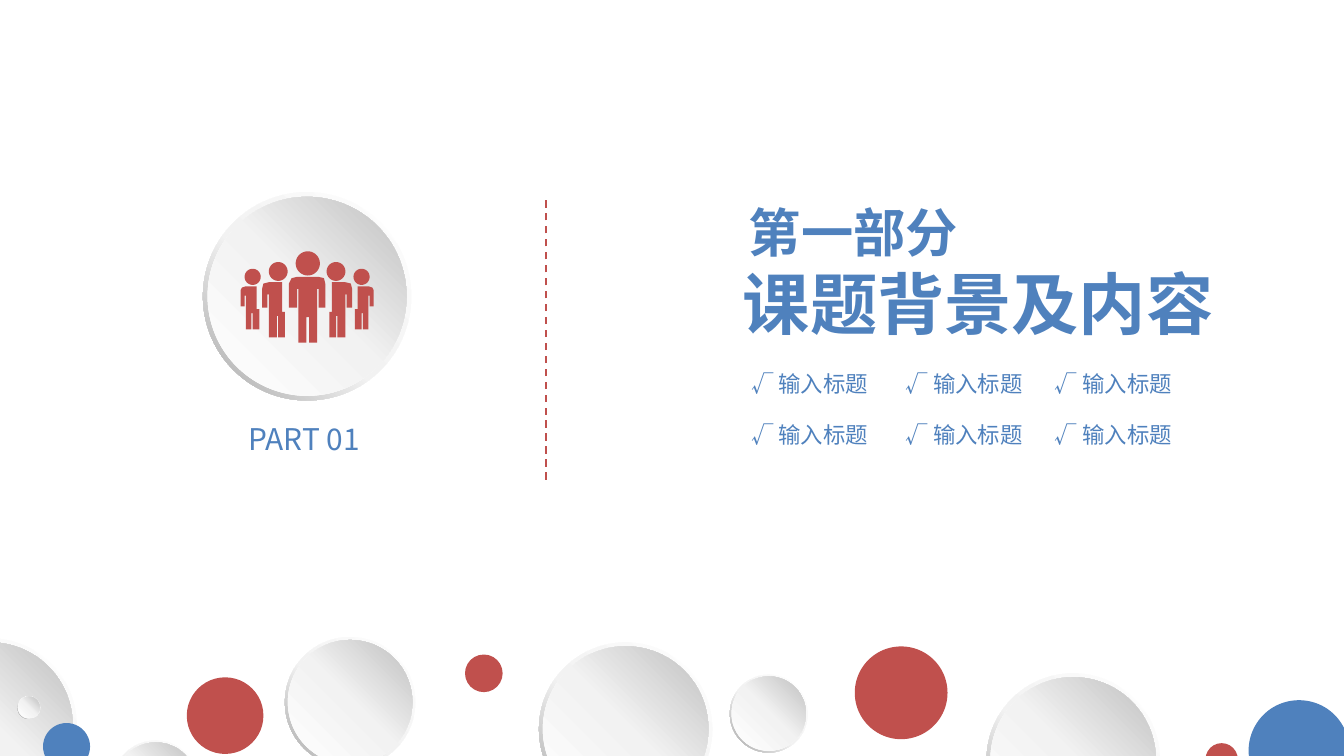
"""Build a section title slide with a people badge and a border of bubbles."""
from copy import deepcopy
from math import cos, pi, sin

from lxml.etree import SubElement
from pptx import Presentation
from pptx.dml.color import RGBColor
from pptx.enum.dml import MSO_LINE
from pptx.enum.shapes import MSO_CONNECTOR, MSO_SHAPE
from pptx.enum.text import MSO_ANCHOR, PP_ALIGN
from pptx.oxml.ns import qn
from pptx.util import Inches, Pt

BLUE = RGBColor(0x4F, 0x81, 0xBD)
RED = RGBColor(0xC0, 0x50, 0x4D)
WHITE = RGBColor(0xFF, 0xFF, 0xFF)
PALE = RGBColor(0xF2, 0xF2, 0xF2)
SILVER = RGBColor(0xBF, 0xBF, 0xBF)
GREY = RGBColor(0xA6, 0xA6, 0xA6)

RIM = {"angle": 225, "stops": [(0, WHITE), (0.55, PALE), (1, GREY)]}
FACE = {"angle": 45, "stops": [(0, WHITE), (0.51, PALE), (1, SILVER)]}

BUBBLES = [
    (4.01, 4.78, 1.29, None), (6.36, 4.81, 0.69, RED),
    (2.12, 4.74, 0.97, None), (9.29, 5.21, 0.75, BLUE),
    (0.84, 5.51, 0.64, None), (3.46, 4.87, 0.28, RED),
    (5.43, 5.02, 0.58, None), (7.34, 5.01, 1.29, None),
    (8.97, 5.53, 0.24, RED), (-0.72, 4.75, 1.29, None),
    (1.39, 5.04, 0.57, RED), (0.32, 5.38, 0.35, BLUE),
    (0.13, 5.18, 0.17, None),
]

MIRROR = 4.57
LEADER_HEAD = (2.29, 1.96, 0.09)
LEADER_BODY = [
    (2.37, 2.29), (2.37, 2.15), (2.36, 2.15), (2.36, 2.55), (2.3, 2.55),
    (2.3, 2.36), (2.28, 2.36), (2.28, 2.55), (2.22, 2.55), (2.22, 2.15),
    (2.21, 2.15), (2.21, 2.29), (2.15, 2.29), (2.15, 2.11), (2.17, 2.07),
    (2.21, 2.06), (2.37, 2.06), (2.41, 2.07), (2.42, 2.11), (2.42, 2.29),
]
SIDE_HEADS = [(2.07, 2.02, 0.07), (1.88, 2.06, 0.06)]
SIDE_BODIES = [
    [(2.12, 2.32), (2.12, 2.51), (2.07, 2.51), (2.07, 2.35), (2.06, 2.35),
     (2.06, 2.51), (2, 2.51), (2, 2.19), (1.99, 2.19), (1.99, 2.29),
     (1.95, 2.29), (1.95, 2.15), (1.96, 2.11), (2, 2.1), (2.1, 2.1),
     (2.1, 2.32)],
    [(1.93, 2.3), (1.93, 2.45), (1.88, 2.45), (1.88, 2.33), (1.87, 2.33),
     (1.87, 2.45), (1.83, 2.45), (1.83, 2.2), (1.82, 2.2), (1.82, 2.28),
     (1.79, 2.28), (1.79, 2.16), (1.8, 2.14), (1.83, 2.13), (1.91, 2.13),
     (1.91, 2.3)],
]


def circle(center_x, center_y, radius, steps=48):
    angles = [2 * pi * step / steps for step in range(steps)]
    return [(center_x + radius * cos(angle), center_y + radius * sin(angle)) for angle in angles]


def people():
    side = [circle(*head) for head in SIDE_HEADS] + SIDE_BODIES
    mirrored = [[(MIRROR - x, y) for x, y in outline] for outline in side]
    return [circle(*LEADER_HEAD), LEADER_BODY] + side + mirrored


class SlideBuilder:
    def __init__(self, slide, font="Noto Sans CJK SC"):
        self.slide = slide
        self.font = font

    def paint(self, shape, style):
        shape.shadow.inherit = False
        shape.line.fill.background()
        if isinstance(style, RGBColor):
            shape.fill.solid()
            shape.fill.fore_color.rgb = style
            return
        shape.fill.gradient()
        shape.fill.gradient_angle = style["angle"]
        stop_list = shape._element.spPr.find(qn("a:gradFill")).find(qn("a:gsLst"))
        stop_list.append(deepcopy(stop_list[0]))
        for stop, (position, color) in zip(shape.fill.gradient_stops, style["stops"]):
            stop.position = position
            stop.color.rgb = color

    def bubble(self, left, top, size, color=None):
        inset = 0.0225 * size
        layers = [(MSO_SHAPE.DONUT, 0, RIM), (MSO_SHAPE.OVAL, inset, FACE)]
        for preset, gap, gradient in layers:
            side = Inches(size - 2 * gap)
            shape = self.slide.shapes.add_shape(
                preset, Inches(left + gap), Inches(top + gap), side, side)
            if preset == MSO_SHAPE.DONUT:
                shape.adjustments[0] = 0.049
            self.paint(shape, color or gradient)

    def outline(self, contours, color):
        contours = [[(Inches(x), Inches(y)) for x, y in points] for points in contours]
        builder = self.slide.shapes.build_freeform(*contours[0][0])
        for points in contours:
            if points is not contours[0]:
                builder.move_to(*points[0])
            builder.add_line_segments(points[1:], close=True)
        self.paint(builder.convert_to_shape(), color)

    def dashed_line(self, x, top, bottom, color):
        connector = self.slide.shapes.add_connector(
            MSO_CONNECTOR.STRAIGHT, Inches(x), Inches(bottom), Inches(x), Inches(top))
        connector.line.color.rgb = color
        for name, value in {"width": Pt(1), "dash_style": MSO_LINE.DASH}.items():
            setattr(connector.line, name, value)
        SubElement(connector._element.spPr, qn("a:effectLst"))

    def text(self, box, paragraphs, margins=(0.1, 0.05), wrap=True):
        frame = self.slide.shapes.add_textbox(*map(Inches, box)).text_frame
        across, down = map(Inches, margins)
        layout = {"word_wrap": wrap, "vertical_anchor": MSO_ANCHOR.MIDDLE,
                  "margin_left": across, "margin_right": across,
                  "margin_top": down, "margin_bottom": down}
        for name, value in layout.items():
            setattr(frame, name, value)
        for index, (runs, alignment) in enumerate(paragraphs):
            paragraph = frame.add_paragraph() if index else frame.paragraphs[0]
            paragraph.alignment = alignment
            for content, size, bold in runs:
                self.run(paragraph, content, size, bold)

    def run(self, paragraph, content, size, bold):
        run = paragraph.add_run()
        run.text = content
        for name, value in {"name": self.font, "size": Pt(size), "bold": bold}.items():
            setattr(run.font, name, value)
        run.font.color.rgb = BLUE
        east_asian = SubElement(run._r.get_or_add_rPr(), qn("a:ea"))
        east_asian.set("typeface", self.font)


def main():
    presentation = Presentation()
    presentation.slide_width = Inches(10)
    presentation.slide_height = Inches(10 * 9 / 16)
    builder = SlideBuilder(presentation.slides.add_slide(presentation.slide_layouts[6]))

    builder.text((5.43, 1.43, 3.74, 1.18), [
        ([(" ", 14, True), ("第一部分", 28, True)], PP_ALIGN.LEFT),
        ([("课题背景及内容", 36, True)], PP_ALIGN.CENTER),
    ], wrap=False)
    builder.dashed_line(4.06, 1.47, 3.57, RED)
    builder.text((1.85, 3.13, 0.99, 0.27), [([("PART 01", 16, False)], PP_ALIGN.LEFT)], (0, 0))
    builder.bubble(1.51, 1.43, 1.55)
    builder.outline(people(), RED)
    for top in (2.72, 3.1):
        for left in (5.52, 6.67, 7.78):
            builder.text((left, top, 1.1, 0.27),
                         [([("√ 输入标题", 12, False)], PP_ALIGN.LEFT)], (0.07, 0.03))
    for bubble in BUBBLES:
        builder.bubble(*bubble)

    presentation.save("out.pptx")


if __name__ == "__main__":
    main()
